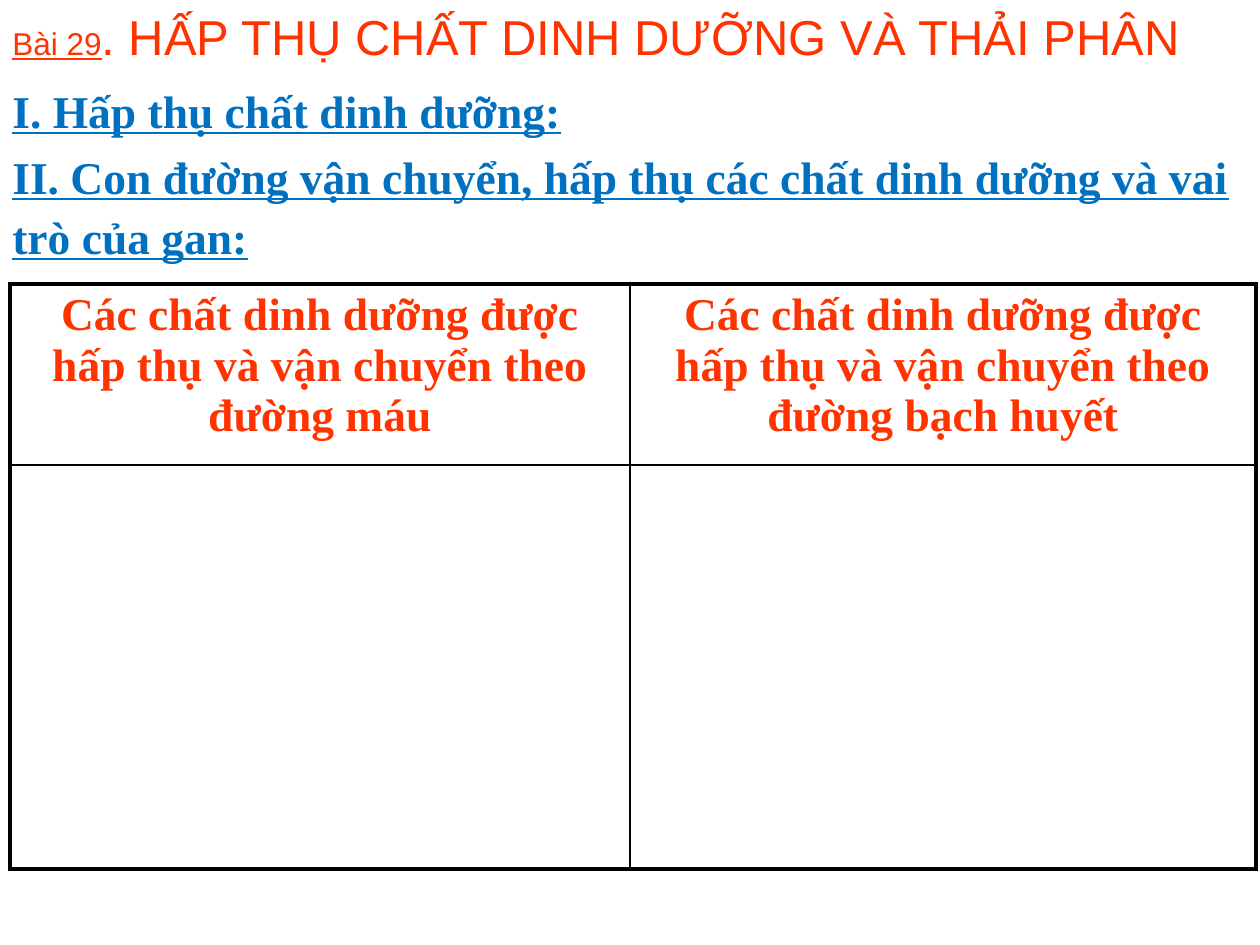
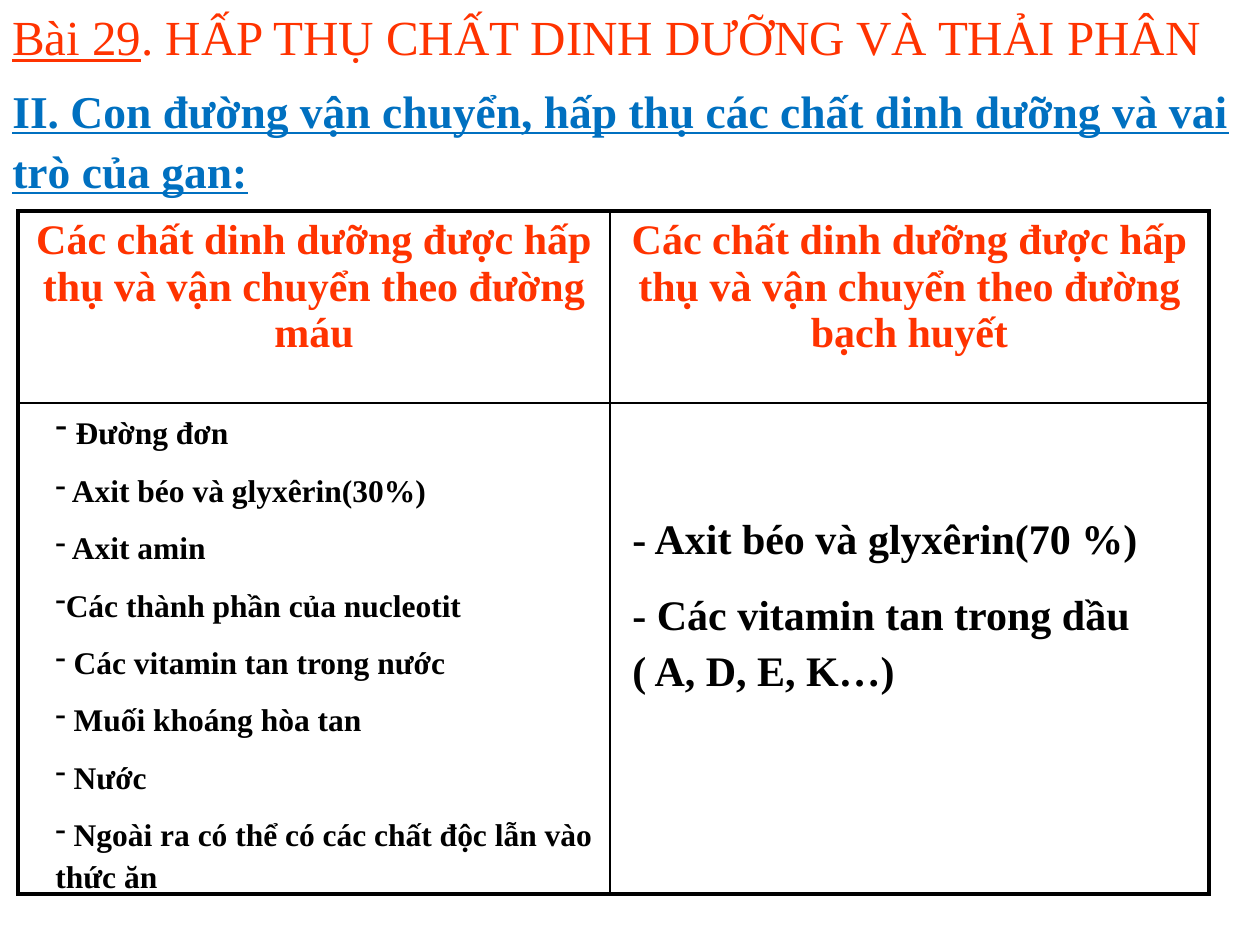
from dataclasses import dataclass

from lxml import etree
from pptx import Presentation
from pptx.dml.color import RGBColor
from pptx.enum.text import MSO_ANCHOR, PP_ALIGN
from pptx.oxml.ns import qn
from pptx.util import Emu, Pt

CENTER = PP_ALIGN.CENTER
TOP = MSO_ANCHOR.TOP
EMU_PER_PX = 914400 / 126


@dataclass(frozen=True)
class Theme:
    red: str = "FF3300"
    blue: str = "0070C0"
    black: str = "000000"
    white: str = "FFFFFF"
    sans: str = "Arial"
    serif: str = "Times New Roman"
    title: int = 28
    heading: int = 26
    large: int = 24
    lead: int = 20
    body: int = 18
    outer_line: float = 2.25
    inner_line: float = 1
    line_spacing: float = 1.1


theme = Theme()


def px(length):
    return Emu(round(length * EMU_PER_PX))


def add_run(paragraph, text, size, color, font=theme.serif, bold=True, underline=False):
    run = paragraph.add_run()
    run.text = text
    run.font.size = Pt(size)
    run.font.name = font
    run.font.bold = bold
    run.font.underline = underline
    run.font.color.rgb = RGBColor.from_string(color)


# Wording
LESSON = "Bài 29"
LESSON_NAME = ". HẤP THỤ CHẤT DINH DƯỠNG VÀ THẢI PHÂN"
ABSORPTION = "I. Hấp thụ chất dinh dưỡng:"
TRANSPORT = "II. Con đường vận chuyển, hấp thụ các chất dinh dưỡng và vai trò của gan:"
COLUMN_HEADS = [
    "Các chất dinh dưỡng được hấp thụ và vận chuyển theo đường " + route
    for route in ("máu", "bạch huyết")
]
BLOOD_ROUTE = [
    "Đường đơn",
    " Axit béo và glyxêrin(30%)",
    " Axit amin",
    "Các thành phần của nucleotit",
    " Các vitamin tan trong nước",
    " Muối khoáng hòa tan",
    " Nước",
    " Ngoài ra có thể có các chất độc lẫn vào thức ăn",
]
LYMPH_ROUTE = [
    ["- Axit béo và glyxêrin(70 %)"],
    ["- Các vitamin tan trong dầu ", "( A, D, E, K…)"],
]

# Per slide: lesson number style, headings (text, top, width, height, wrap), table
SLIDES = [
    {
        "lesson_font": theme.sans,
        "lesson_size": theme.body,
        "headings": [(TRANSPORT, 137, 1260, 123, True), (ABSORPTION, 71, 580, 68, False)],
        "table_at": (10, 284),
        "columns": (620, 626),
        "rows": (181, 404),
        "head_size": theme.heading,
    },
    {
        "lesson_font": theme.serif,
        "lesson_size": theme.title,
        "headings": [(TRANSPORT, 71, 1260, 123, True)],
        "table_at": (18, 211),
        "columns": (592, 599),
        "rows": (192, 491),
        "head_size": theme.large,
    },
]

presentation = Presentation()
presentation.slide_width = px(1260)
presentation.slide_height = px(945)

for layout in SLIDES:
    slide = presentation.slides.add_slide(presentation.slide_layouts[6])

    # Comparison table
    left, top = layout["table_at"]
    table = slide.shapes.add_table(
        2, 2, px(left), px(top), px(sum(layout["columns"])), px(sum(layout["rows"]))
    ).table
    table.first_row = False
    table.horz_banding = False
    for index in range(2):
        table.columns[index].width = px(layout["columns"][index])
        table.rows[index].height = px(layout["rows"][index])
    for row in range(2):
        for column in range(2):
            cell = table.cell(row, column)
            cell.vertical_anchor = TOP
            # Thick lines outside, thin lines inside
            outer_sides = ("lnL" if column == 0 else "lnR", "lnT" if row == 0 else "lnB")
            properties = cell._tc.get_or_add_tcPr()
            for side in ("lnL", "lnR", "lnT", "lnB"):
                width = theme.outer_line if side in outer_sides else theme.inner_line
                line = etree.SubElement(properties, qn("a:" + side), w=str(Pt(width)))
                fill = etree.SubElement(line, qn("a:solidFill"))
                etree.SubElement(fill, qn("a:srgbClr"), val=theme.black)
            if row == 0:
                cell.fill.solid()
                cell.fill.fore_color.rgb = RGBColor.from_string(theme.white)
                paragraph = cell.text_frame.paragraphs[0]
                paragraph.alignment = CENTER
                paragraph.space_before = Pt(layout["head_size"] * 0.2)
                add_run(paragraph, COLUMN_HEADS[column], layout["head_size"], theme.red)
            else:
                cell.fill.background()

    # Lesson title
    frame = slide.shapes.add_textbox(0, 0, px(1349), px(79)).text_frame
    frame.word_wrap = True
    paragraph = frame.paragraphs[0]
    paragraph.space_before = Pt(theme.title * 0.2)
    font = layout["lesson_font"]
    add_run(paragraph, LESSON, layout["lesson_size"], theme.red, font, False, True)
    add_run(paragraph, LESSON_NAME, theme.title, theme.red, font, False)

    # Section headings
    for text, top, width, height, wrap in layout["headings"]:
        frame = slide.shapes.add_textbox(0, px(top), px(width), px(height)).text_frame
        frame.word_wrap = wrap
        paragraph = frame.paragraphs[0]
        paragraph.line_spacing = theme.line_spacing
        add_run(paragraph, text, theme.heading, theme.blue, underline=True)

# Nutrients carried by blood, on the last slide
frame = slide.shapes.add_textbox(px(43), px(399), px(577), px(494)).text_frame
frame.word_wrap = True
for index, nutrient in enumerate(BLOOD_ROUTE):
    paragraph = frame.paragraphs[0] if index == 0 else frame.add_paragraph()
    paragraph.space_before = Pt(theme.body / 2)
    paragraph.line_spacing = theme.line_spacing
    bullet = etree.SubElement(paragraph._p.get_or_add_pPr(), qn("a:buChar"))
    bullet.set("char", "-")
    if index == 0:
        add_run(paragraph, " ", theme.lead, theme.black)
    add_run(paragraph, nutrient, theme.body, theme.black)

# Nutrients carried by lymph
frame = slide.shapes.add_textbox(px(620), px(501), px(586), px(190)).text_frame
frame.word_wrap = True
for index, lines in enumerate(LYMPH_ROUTE):
    paragraph = frame.paragraphs[0] if index == 0 else frame.add_paragraph()
    paragraph.space_before = Pt(theme.large / 2)
    paragraph.line_spacing = theme.line_spacing
    for number, text in enumerate(lines):
        if number > 0:
            paragraph.add_line_break()
        add_run(paragraph, text, theme.large, theme.black)

presentation.save("out.pptx")
